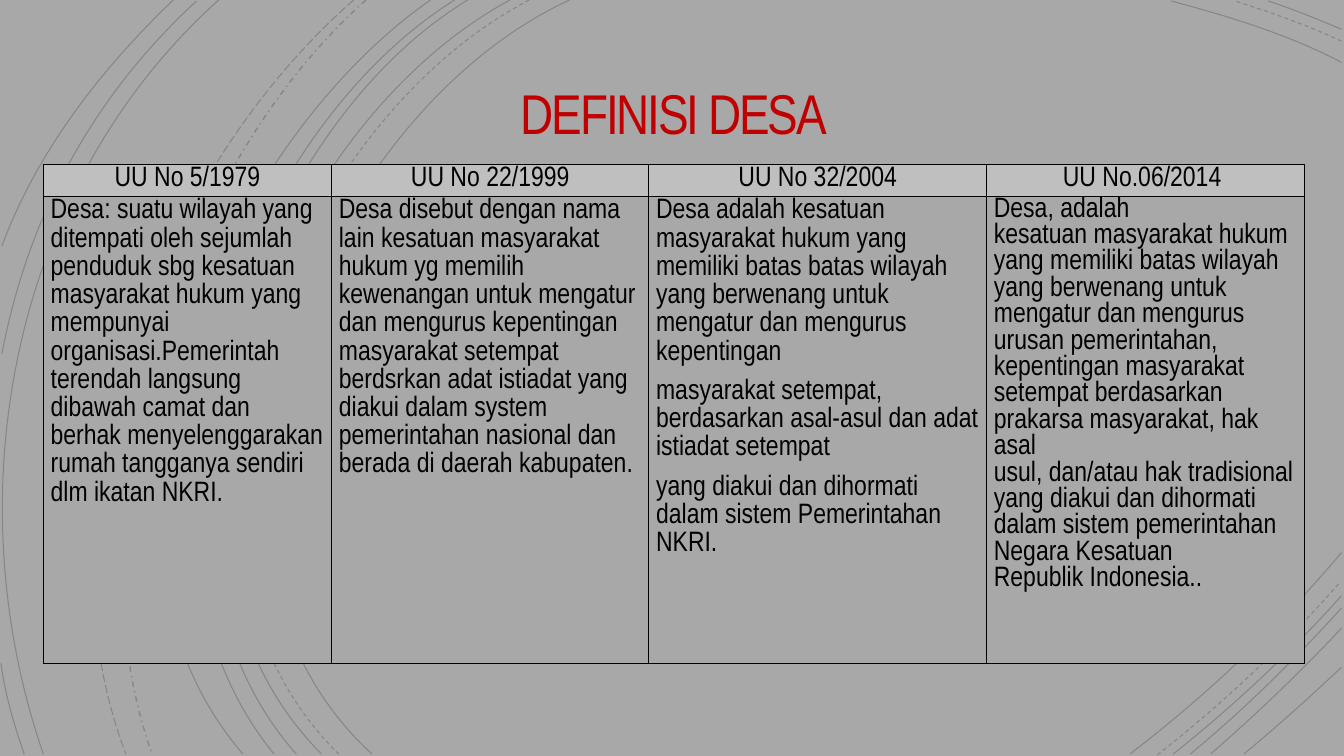
"""Build the slide comparing four legal definitions of a village."""
from dataclasses import dataclass

from lxml.etree import SubElement
from pptx import Presentation
from pptx.dml.color import RGBColor
from pptx.enum.dml import MSO_LINE_DASH_STYLE as Dash
from pptx.enum.text import MSO_ANCHOR as Anchor, MSO_AUTO_SIZE as AutoSize, PP_ALIGN as Align
from pptx.oxml.ns import qn
from pptx.util import Pt

Point = tuple[float, float]


@dataclass(frozen=True)
class Theme:
    font: str = "Arial Narrow"
    title_size: float = 40
    text_size: float = 20
    background: RGBColor = RGBColor(0xA8, 0xA8, 0xA8)
    header: RGBColor = RGBColor(0xBF, 0xBF, 0xBF)
    title: RGBColor = RGBColor(0xC0, 0x00, 0x00)
    ink: RGBColor = RGBColor(0x00, 0x00, 0x00)
    curve_opacity: int = 20


@dataclass(frozen=True)
class Curve:
    start: Point
    first_control: Point
    second_control: Point
    end: Point
    dash: Dash = Dash.SOLID
    weight: float = 0.75


@dataclass(frozen=True)
class Definition:
    law: str
    width: float
    paragraphs: tuple[str, ...]
    line_spacing: float = 1.07
    space_after: float = 8


THEME = Theme()
HEADER_HEIGHT, BODY_HEIGHT = 23, 333.2

CURVES = (
    Curve((406.8, 0), (226.8, 82.8), (103, 388.8), (265.7, 538.6)),
    Curve((958.3, 44.6), (920.2, 24.5), (877, 11.5), (836.6, 0.7)),
    Curve((807.1, 538.6), (861.8, 496.8), (913.7, 447.8), (958.3, 394.6)),
    Curve((378, 0), (205.2, 90), (88.6, 386.6), (241.9, 538.6), Dash.DASH),
    Curve((958.3, 29.5), (933.8, 18), (907.2, 8.6), (882, 0.7), Dash.DASH),
    Curve((826.6, 539.3), (873.4, 502.6), (918, 460.8), (957.6, 415.4), Dash.DASH),
    Curve((364.3, 0), (194.4, 91.4), (79.2, 386.6), (229.7, 538.6)),
    Curve((958.3, 20.9), (941, 13.7), (923.8, 6.5), (905.8, 0.7)),
    Curve((838.1, 538.6), (880.6, 504.7), (921.6, 466.6), (958.3, 425.5)),
    Curve((334.1, 0), (175.7, 95.8), (79.2, 389.5), (211.7, 538.6)),
    Curve((850.3, 538.6), (888.5, 506.9), (924.5, 471.6), (958.3, 434.2)),
    Curve((324.7, 0), (166.3, 99.4), (69.8, 383.8), (195.8, 538.6)),
    Curve((864.7, 538.6), (897.1, 510.5), (928.8, 480.2), (958.3, 448.6)),
    Curve((307.4, 0), (156.2, 105.8), (38.2, 380.9), (173.5, 538.6)),
    Curve((888.5, 538.6), (912.2, 519.1), (935.3, 498.2), (958.3, 476.6)),
    Curve((261.4, 0), (126.7, 119.5), (46.8, 366.5), (108.7, 538.6), Dash.DASH_DOT, 1),
    Curve((252.7, 0), (113, 121.7), (20.9, 359.3), (90, 538.6), Dash.LONG_DASH),
    Curve((156.2, 0), (7.9, 133.2), (-33.1, 352.8), (31, 538.6)),
    Curve((140.4, 0.7), (66.2, 69.1), (20.2, 154.1), (1.4, 252.7)),
    Curve((0.7, 473.8), (3.6, 496.1), (10.1, 517.7), (17.3, 538.6)),
    Curve((123.8, 0), (72, 49.7), (26.6, 108), (1.4, 175.7)),
)

DEFINITIONS = (
    Definition("UU No 5/1979", 205.9, (
        "Desa: suatu wilayah yang ditempati oleh sejumlah penduduk sbg kesatuan masyarakat "
        "hukum yang mempunyai organisasi.Pemerintah terendah langsung dibawah camat dan "
        "berhak menyelenggarakan rumah tangganya sendiri dlm ikatan NKRI.",)),
    Definition("UU No 22/1999", 226.6, (
        "Desa disebut dengan nama lain kesatuan masyarakat hukum yg memilih kewenangan untuk "
        "mengatur dan mengurus kepentingan masyarakat setempat berdsrkan adat istiadat yang "
        "diakui dalam system pemerintahan nasional dan berada di daerah kabupaten.",)),
    Definition("UU No 32/2004", 241.3, (
        "Desa adalah kesatuan masyarakat hukum yang memiliki batas batas wilayah yang "
        "berwenang untuk mengatur dan mengurus kepentingan",
        "masyarakat setempat, berdasarkan asal-asul dan adat istiadat setempat",
        "yang diakui dan dihormati dalam sistem Pemerintahan NKRI.")),
    Definition("UU No.06/2014 ", 226.8, (
        "Desa, adalah",
        "kesatuan masyarakat hukum yang memiliki batas wilayah yang berwenang untuk mengatur "
        "dan mengurus",
        "urusan pemerintahan, kepentingan masyarakat setempat berdasarkan prakarsa "
        "masyarakat, hak asal",
        "usul, dan/atau hak tradisional yang diakui dan dihormati dalam sistem pemerintahan "
        "Negara Kesatuan",
        "Republik Indonesia.."), 1.0, 0),
)


def draw_curve(slide, curve: Curve) -> None:
    """Draw one faint background curve as a single cubic segment."""
    points = [(Pt(x), Pt(y)) for x, y in
              (curve.start, curve.first_control, curve.second_control, curve.end)]
    builder = slide.shapes.build_freeform(*points[0])
    builder.add_line_segments(points[1:], close=False)
    shape = builder.convert_to_shape()
    outline = shape.element.xpath(".//a:path")[0]
    segments = outline.findall(qn("a:lnTo"))
    cubic = SubElement(outline, qn("a:cubicBezTo"))
    for segment in segments:
        cubic.append(segment[0])
        outline.remove(segment)
    shape.shadow.inherit = False
    shape.fill.background()
    shape.line.width = Pt(curve.weight)
    shape.line.color.rgb = THEME.ink
    shape.line.dash_style = curve.dash
    color = shape.element.xpath(".//a:ln//a:srgbClr")[0]
    SubElement(color, qn("a:alpha"), val=str(THEME.curve_opacity * 1000))


def format_run(run, size: float, color: RGBColor) -> None:
    """Apply the theme font, a size and a colour to a run."""
    run.font.name = THEME.font
    run.font.size = Pt(size)
    run.font.color.rgb = color


def write_title(slide, text: str) -> None:
    """Fill the title placeholder and bring it in front of the curves."""
    title = slide.shapes.title
    title.left, title.top, title.width, title.height = Pt(57), Pt(18.7), Pt(848.4), Pt(130.3)
    frame = title.text_frame
    frame.text = text
    frame.word_wrap = True
    frame.auto_size = AutoSize.NONE
    frame.vertical_anchor = Anchor.MIDDLE
    frame.margin_left = frame.margin_right = frame.margin_top = frame.margin_bottom = Pt(18)
    paragraph = frame.paragraphs[0]
    paragraph.alignment = Align.CENTER
    paragraph.line_spacing = 0.85
    run = paragraph.runs[0]
    format_run(run, THEME.title_size, THEME.title)
    run.font._element.set("spc", "-150")
    title.element.getparent().append(title.element)


def add_borders(cell) -> None:
    """Give a cell a one-point line on each side."""
    properties = cell._tc.get_or_add_tcPr()
    for side in ("lnL", "lnR", "lnT", "lnB"):
        line = SubElement(properties, qn(f"a:{side}"), w=str(Pt(1)))
        fill = SubElement(line, qn("a:solidFill"))
        SubElement(fill, qn("a:srgbClr"), val=str(THEME.ink))


def write_cell(cell, text: str, fill: RGBColor, align: Align, line_spacing: float,
               space_after: float) -> None:
    """Write and format one table cell."""
    add_borders(cell)
    cell.fill.solid()
    cell.fill.fore_color.rgb = fill
    cell.margin_left = cell.margin_right = Pt(5.2)
    cell.margin_top = cell.margin_bottom = Pt(0)
    cell.text_frame.text = text
    for paragraph in cell.text_frame.paragraphs:
        paragraph.alignment = align
        paragraph.line_spacing = line_spacing
        paragraph.space_after = Pt(space_after)
        format_run(paragraph.runs[0], THEME.text_size, THEME.ink)


def add_definitions(slide) -> None:
    """Add the table with one column for each law."""
    width = sum(definition.width for definition in DEFINITIONS)
    table = slide.shapes.add_table(2, len(DEFINITIONS), Pt(31), Pt(117.5), Pt(width),
                                   Pt(HEADER_HEIGHT + BODY_HEIGHT)).table
    table.first_row = table.horz_banding = False
    table.rows[0].height, table.rows[1].height = Pt(HEADER_HEIGHT), Pt(BODY_HEIGHT)
    for index, definition in enumerate(DEFINITIONS):
        table.columns[index].width = Pt(definition.width)
        write_cell(table.cell(0, index), definition.law, THEME.header, Align.CENTER, 1.07, 8)
        write_cell(table.cell(1, index), "\n".join(definition.paragraphs), THEME.background,
                   Align.LEFT, definition.line_spacing, definition.space_after)


def main() -> None:
    """Build and save the presentation."""
    presentation = Presentation()
    presentation.slide_width, presentation.slide_height = Pt(960), Pt(540)
    slide = presentation.slides.add_slide(presentation.slide_layouts[5])
    slide.background.fill.solid()
    slide.background.fill.fore_color.rgb = THEME.background
    for curve in CURVES:
        draw_curve(slide, curve)
    write_title(slide, "DEFINISI DESA")
    add_definitions(slide)
    presentation.save("out.pptx")


if __name__ == "__main__":
    main()
